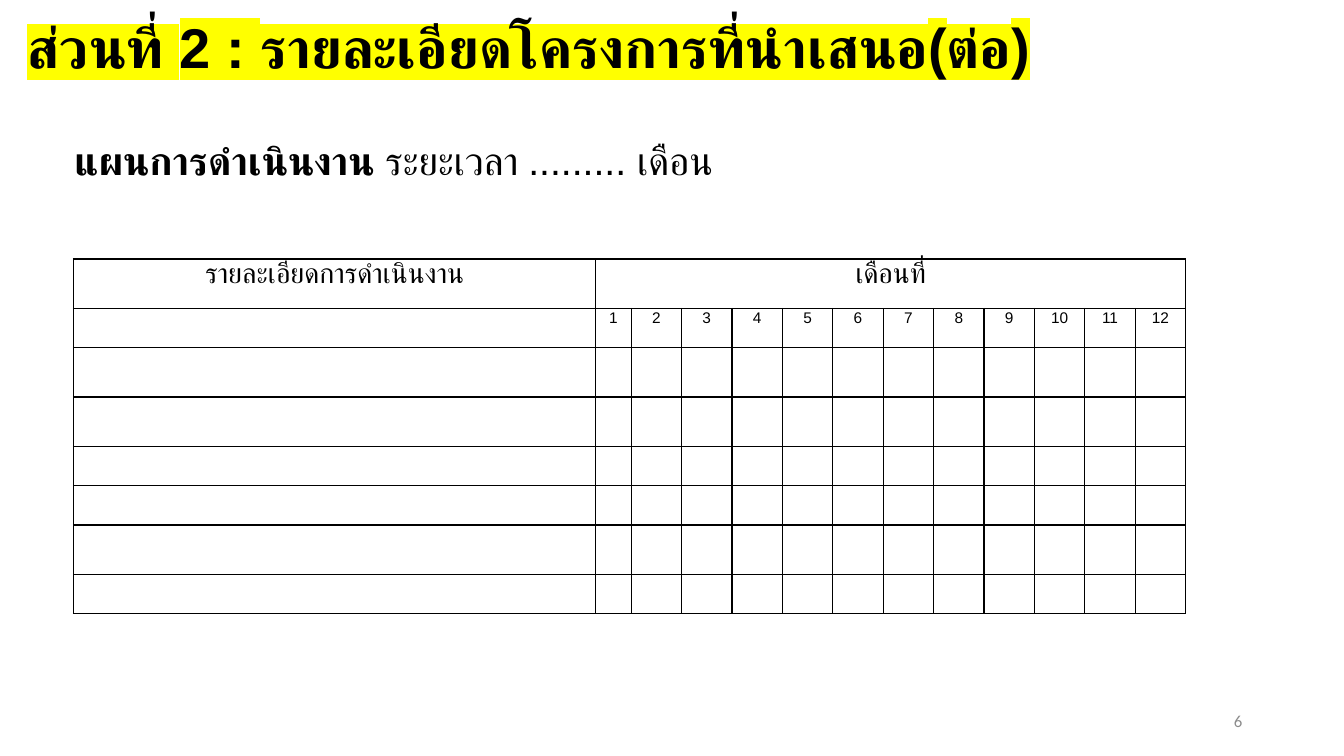
from lxml import etree
from pptx import Presentation, util as u
from pptx.dml.color import RGBColor
from pptx.enum import text as t
from pptx.oxml import ns

WIDE, HIGH = 13.33, 7.5
TALL, LOW = 0.49, 0.39
ROWS = [TALL, LOW, TALL, TALL, LOW, LOW, TALL, LOW]
MONTHS = 12
COLS = [5.18, 0.35] + [0.5] * (MONTHS - 1)


def paint(font, code):
    font.color.rgb = RGBColor.from_string(code)


def style(para, size, face="Arial", code="000000", bold=False, align=t.PP_ALIGN.LEFT):
    para.alignment = align
    font = para.font
    font.size, font.name, font.bold = u.Pt(size), face, bold
    paint(font, code)


def place(shape, left, top, width, height):
    shape.left, shape.top = u.Inches(left), u.Inches(top)
    shape.width, shape.height = u.Inches(width), u.Inches(height)
    frame = shape.text_frame
    frame.word_wrap = True
    frame.vertical_anchor = t.MSO_ANCHOR.MIDDLE
    return frame.paragraphs[0]


def label(slide, *box):
    return place(slide.shapes.add_textbox(0, 0, 0, 0), *box)


def solid(parent, code):
    fill = etree.SubElement(parent, ns.qn("a:solidFill"))
    etree.SubElement(fill, ns.qn("a:srgbClr"), val=code)


def mark(run, code):
    props = run.font._element if hasattr(run.font, "_element") else run._r.get_or_add_rPr()
    light = etree.SubElement(props, ns.qn("a:highlight"))
    etree.SubElement(light, ns.qn("a:srgbClr"), val=code)


def border(cell, code, width):
    props = cell._tc.get_or_add_tcPr()
    for side in "LRTB":
        line = etree.SubElement(props, ns.qn(f"a:ln{side}"), w=str(u.Pt(width)))
        solid(line, code)


def write(cell, words, size, face):
    cell.text = words
    para = cell.text_frame.paragraphs[0]
    style(para, size, face, align=t.PP_ALIGN.CENTER)
    para.line_spacing = 1.07


def plan(slide, left, top):
    frame = slide.shapes.add_table(
        len(ROWS), len(COLS), u.Inches(left), u.Inches(top),
        u.Inches(sum(COLS)), u.Inches(sum(ROWS)))
    table = frame.table
    table.first_row = table.horz_banding = False
    for col, width in zip(table.columns, COLS):
        col.width = u.Inches(width)
    for row, height in zip(table.rows, ROWS):
        row.height = u.Inches(height)
    for cell in table.iter_cells():
        cell.margin_left = cell.margin_right = u.Inches(0.07)
        cell.margin_top = cell.margin_bottom = 0
        border(cell, "000000", 1)
        cell.fill.background()
    table.cell(0, 1).merge(table.cell(0, MONTHS))
    write(table.cell(0, 0), "รายละเอียดการดำเนินงาน", 20, "Calibri")
    write(table.cell(0, 1), "เดือนที่", 20, "Calibri")
    for month in range(1, MONTHS + 1):
        write(table.cell(1, month), str(month), 11, "Arial")


def main():
    deck = Presentation()
    deck.slide_width, deck.slide_height = u.Inches(WIDE), u.Inches(HIGH)
    slide = deck.slides.add_slide(deck.slide_layouts[5])

    head = place(slide.shapes.title, 0.17, 0, 11.5, 1)
    style(head, 40, bold=True)
    head.line_spacing = 0.9
    run = head.add_run()
    run.text = "ส่วนที่ 2 : รายละเอียดโครงการที่นำเสนอ(ต่อ)"
    mark(run, "FFFF00")

    plan(slide, 0.73, 2.57)

    term = label(slide, 0.64, 1.3, 7.81, 0.57)
    style(term, 28)
    name = term.add_run()
    name.text = "แผนการดำเนินงาน "
    name.font.bold = True
    term.add_run().text = "ระยะเวลา ......... เดือน"

    page = label(slide, 9.42, 6.95, 3, 0.4)
    style(page, 12, "Calibri", "8C8C8C", align=t.PP_ALIGN.RIGHT)
    page.add_run().text = "6"

    deck.save("out.pptx")


if __name__ == "__main__":
    main()
